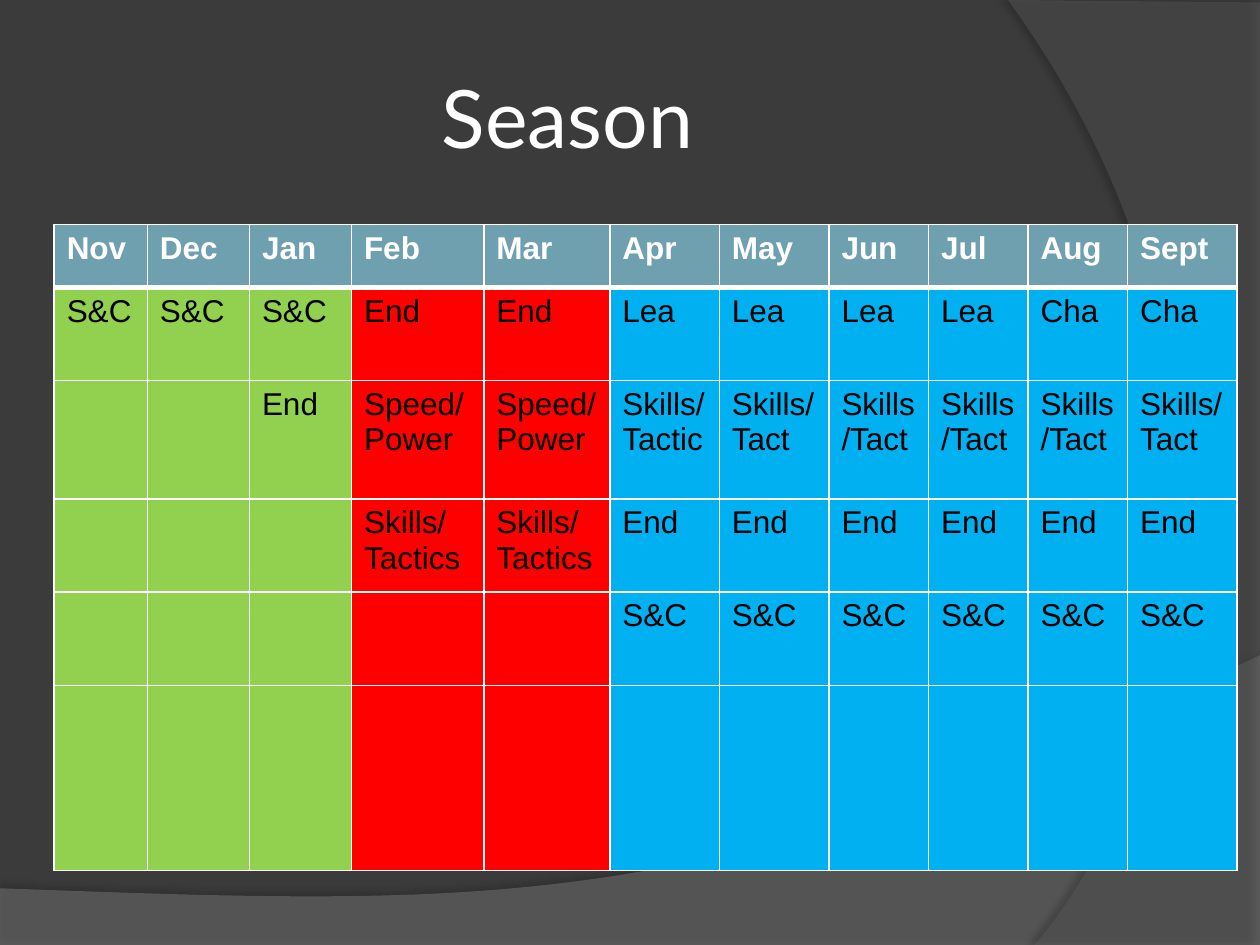
from lxml import etree
from pptx import Presentation
from pptx.dml.color import RGBColor
from pptx.enum.text import MSO_ANCHOR, PP_ALIGN
from pptx.oxml import parse_xml
from pptx.oxml.ns import qn
from pptx.util import Inches, Pt

CENTER = PP_ALIGN.CENTER
MIDDLE = MSO_ANCHOR.MIDDLE
DRAWING_NS = "http://schemas.openxmlformats.org/drawingml/2006/main"
WHITE, BLACK = "FFFFFF", "000000"
BACKGROUND, HEADER = "3B3B3B", "6EA0B0"
PHASE_COLORS = ["92D050"] * 3 + ["FF0000"] * 2 + ["00B0F0"] * 6
COLUMN_WIDTHS = [0.74, 0.81, 0.81, 1.05, 1, 0.87, 0.87, 0.79, 0.79, 0.79, 0.87]
ROW_HEIGHTS = [0.5, 0.74, 0.94, 0.74, 0.74, 1.47]
SEASON = [
    ["Nov", "Dec", "Jan", "Feb", "Mar", "Apr", "May", "Jun", "Jul", "Aug", "Sept"],
    ["S&C"] * 3 + ["End"] * 2 + ["Lea"] * 4 + ["Cha"] * 2,
    ["", "", "End"] + ["Speed/ Power"] * 2 + ["Skills/ Tactic", "Skills/ Tact"]
    + ["Skills/Tact"] * 4,
    [""] * 3 + ["Skills/ Tactics"] * 2 + ["End"] * 6,
    [""] * 5 + ["S&C"] * 6,
    [""] * 11,
]


def rgb(color):
    """Return the colour for a hex string."""
    return RGBColor.from_string(color)


def style_font(font, color, **values):
    """Apply a colour and a set of format values to a font."""
    font.color.rgb = rgb(color)
    for key, value in values.items():
        setattr(font, key, value)


def curve(start, control1, control2, end, steps=60):
    """Return points along a cubic curve."""
    points = []
    for step in range(steps + 1):
        t = step / steps
        weights = ((1 - t) ** 3, 3 * t * (1 - t) ** 2, 3 * t * t * (1 - t), t ** 3)
        corners = (start, control1, control2, end)
        points.append(tuple(sum(w * c[axis] for w, c in zip(weights, corners))
                            for axis in (0, 1)))
    return points


def add_swoosh(slide, points, color, opacity, shadow_opacity, distance, angle):
    """Draw a translucent background sweep with a soft shadow."""
    outline = [(Inches(x), Inches(y)) for x, y in points]
    builder = slide.shapes.build_freeform(*outline[0])
    builder.add_line_segments(outline[1:], close=True)
    sweep = builder.convert_to_shape()
    sweep.fill.solid()
    sweep.fill.fore_color.rgb = rgb(color)
    sweep.line.fill.background()
    properties = sweep.element.spPr
    fill_color = properties.find(qn("a:solidFill"))[0]
    etree.SubElement(fill_color, qn("a:alpha"), val=str(opacity * 1000))
    properties.append(parse_xml(
        f'<a:effectLst xmlns:a="{DRAWING_NS}"><a:outerShdw blurRad="{Pt(4)}" '
        f'dist="{Pt(distance)}" dir="{angle * 60000}" algn="ctr" rotWithShape="0">'
        f'<a:srgbClr val="{BLACK}"><a:alpha val="{shadow_opacity * 1000}"/>'
        '</a:srgbClr></a:outerShdw></a:effectLst>'))


def add_title(slide, text):
    """Add the centred slide title."""
    title = slide.shapes.add_textbox(Inches(0.5), Inches(0.3), Inches(8.17), Inches(1.25))
    frame = title.text_frame
    margins = {f"margin_{side}": Inches(0.05) for side in ("left", "top", "right", "bottom")}
    for key, value in {"word_wrap": True, "vertical_anchor": MIDDLE, **margins}.items():
        setattr(frame, key, value)
    paragraph = frame.paragraphs[0]
    paragraph.alignment = CENTER
    run = paragraph.add_run()
    run.text = text
    style_font(run.font, WHITE, name="Lato", size=Pt(46))


def set_borders(cell, widths):
    """Give a cell white borders from a dict of side and points."""
    properties = cell._tc.get_or_add_tcPr()
    for side, width in widths.items():
        properties.append(parse_xml(
            f'<a:ln{side} xmlns:a="{DRAWING_NS}" w="{Pt(width)}"><a:solidFill>'
            f'<a:srgbClr val="{WHITE}"/></a:solidFill></a:ln{side}>'))


def fill_cell(cell, text, row, column):
    """Write and format one cell of the season plan."""
    is_header = row == 0
    set_borders(cell, {"L": 1, "R": 1, "T": 3 if row == 1 else 1, "B": 3 if is_header else 1})
    cell.fill.solid()
    cell.fill.fore_color.rgb = rgb(HEADER if is_header else PHASE_COLORS[column])
    if text:
        cell.text = text
        style_font(cell.text_frame.paragraphs[0].runs[0].font,
                   WHITE if is_header else BLACK,
                   name="Arial", size=Pt(18), bold=is_header)


def add_season_table(slide):
    """Add the month by month training plan."""
    plan = slide.shapes.add_table(
        len(SEASON), len(COLUMN_WIDTHS), Inches(0.43), Inches(1.78),
        Inches(sum(COLUMN_WIDTHS)), Inches(sum(ROW_HEIGHTS))).table
    for month, width in zip(plan.columns, COLUMN_WIDTHS):
        month.width = Inches(width)
    for row, (texts, height) in enumerate(zip(SEASON, ROW_HEIGHTS)):
        plan.rows[row].height = Inches(height)
        for column, text in enumerate(texts):
            fill_cell(plan.cell(row, column), text, row, column)


def main():
    """Build and save the season slide."""
    deck = Presentation()
    deck.slide_width, deck.slide_height = Inches(10), Inches(7.5)
    slide = deck.slides.add_slide(deck.slide_layouts[6])
    slide.background.fill.solid()
    slide.background.fill.fore_color.rgb = rgb(BACKGROUND)
    lower_edge = curve((10, 5.2), (5.59, 7.29), (3.91, 7.19), (0, 7.05))
    right_edge = curve((8.21, 7.5), (9.35, 6.19), (10.18, 3), (8, 0))
    add_swoosh(slide, [(0, 7.51), (10, 7.51)] + lower_edge, "7F7F7F", 45, 35, 3.5, 270)
    add_swoosh(slide, [(10, 0.02), (10, 7.5)] + right_edge, "5E5E5E", 40, 45, 4, 180)
    add_title(slide, "Season ")
    add_season_table(slide)
    deck.save("out.pptx")


if __name__ == "__main__":
    main()
